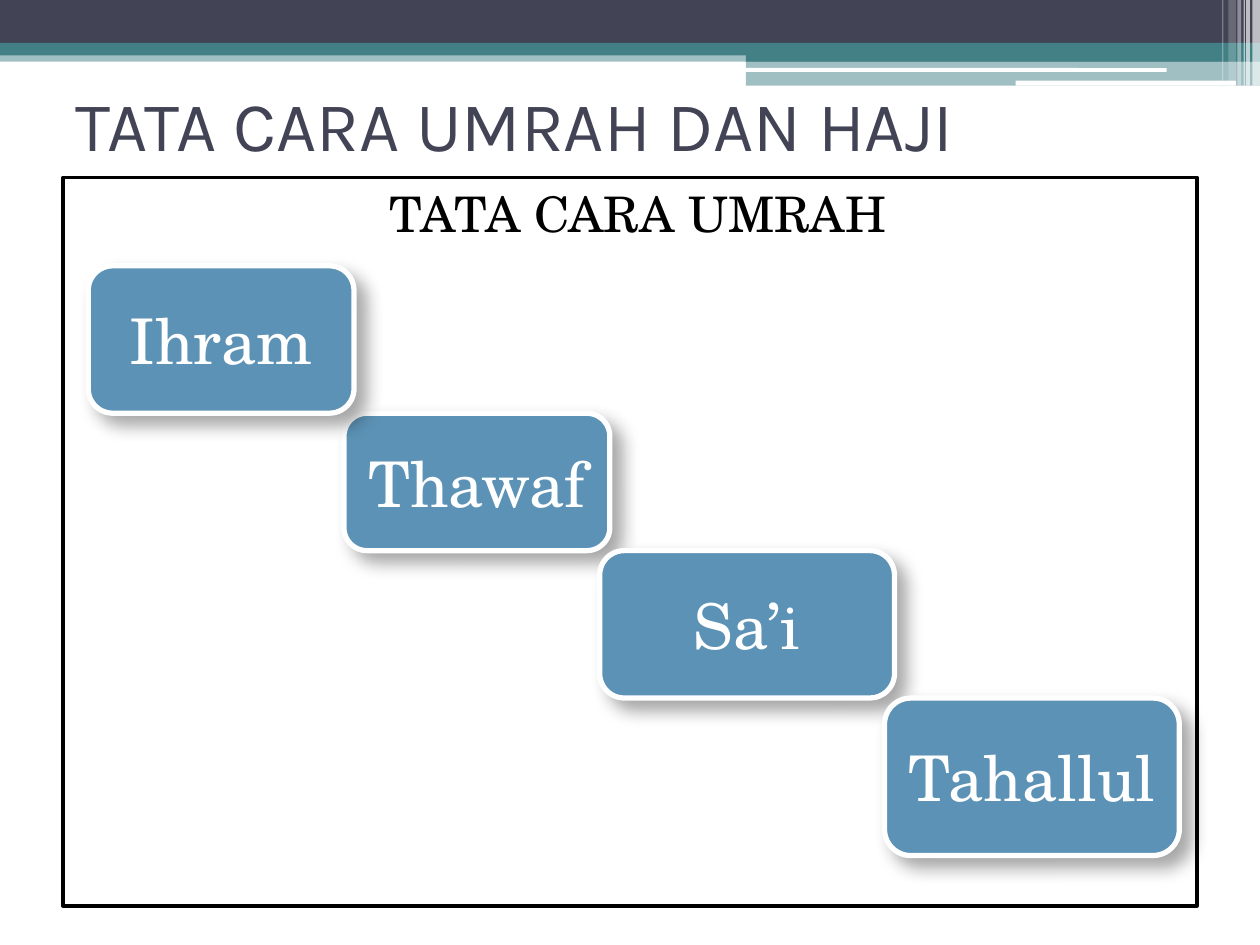
import pptx
import pptx.util
import pptx.dml.color
import pptx.enum.shapes
import pptx.enum.text
import pptx.oxml
import pptx.oxml.ns

Inches, Pt = pptx.util.Inches, pptx.util.Pt
RGB = pptx.dml.color.RGBColor
Shape = pptx.enum.shapes.MSO_SHAPE
Align = pptx.enum.text.PP_ALIGN
Anchor = pptx.enum.text.MSO_ANCHOR

NAVY = RGB(0x42, 0x44, 0x56)
TEAL = RGB(0x43, 0x80, 0x86)
BLUE = RGB(0x5C, 0x92, 0xB5)
WHITE = RGB(0xFF, 0xFF, 0xFF)
BLACK = RGB(0, 0, 0)
SANS, SERIF = "Karla", "TeX Gyre Schola"

BARS = [
    (0, 0.4, 10, 0.09, TEAL, 50),
    (0, 0, 10, 0.34, NAVY, 100),
    (0, 0.34, 10, 0.1, TEAL, 100),
    (5.92, 0.39, 4.08, 0.1, TEAL, 100),
    (5.92, 0.48, 4.08, 0.2, TEAL, 50),
]
LINES = [(5.91, 0.54, 3.35, 0.03), (8.06, 0.64, 1.75, 0.04)]
STRIPES = [
    (9.94, 0.06, 0.68, 65),
    (9.89, 0.03, 0.68, 65),
    (9.87, 0.01, 0.68, 60),
    (9.82, 0.03, 0.68, 40),
    (9.75, 0.06, 0.64, 20),
    (9.7, 0.01, 0.64, 30),
]
STEPS = [
    ("Ihram", 2.11, 1.17),
    ("Thawaf", 2.11, 1.09),
    ("Sa’i", 2.34, 1.17),
    ("Tahallul", 2.34, 1.25),
]


def add_xml(parent, text):
    """Append an XML snippet in the drawing namespace."""
    head, tail = text.split(" ", 1)
    space = pptx.oxml.ns.nsdecls("a")
    parent.append(pptx.oxml.parse_xml(f"{head} {space} {tail}"))


def add_box(slide, box, fill, kind=Shape.RECTANGLE, alpha=100, line=None, width=0):
    """Add a filled shape without a theme shadow."""
    shape = slide.shapes.add_shape(kind, *map(Inches, box))
    shape.shadow.inherit = False
    shape.fill.solid()
    shape.fill.fore_color.rgb = fill
    if alpha < 100:
        color = shape.fill._xPr.find(".//" + pptx.oxml.ns.qn("a:srgbClr"))
        add_xml(color, f'<a:alpha val="{alpha * 1000}"/>')
    if line is None:
        shape.line.fill.background()
    else:
        shape.line.color.rgb = line
        shape.line.width = Pt(width)
    return shape


def put_text(shape, text, size, font, color, align=Align.CENTER, anchor=Anchor.MIDDLE):
    """Write one formatted paragraph and return it."""
    frame = shape.text_frame
    frame.word_wrap = True
    frame.vertical_anchor = anchor
    para = frame.paragraphs[0]
    para.alignment = align
    run = para.add_run()
    run.text = text
    run.font.size = Pt(size)
    run.font.name = font
    run.font.color.rgb = color
    return para


def add_band(slide, left, top):
    """Draw the decorative band across the head of the slide."""
    for x, y, w, h, color, alpha in BARS:
        add_box(slide, (left + x, top + y, w, h), color, alpha=alpha)
    for x, y, w, h in LINES:
        add_box(slide, (left + x, top + y, w, h), WHITE, Shape.ROUNDED_RECTANGLE)
    for x, w, h, alpha in STRIPES:
        add_box(slide, (left + x, top, w, h), WHITE, alpha=alpha)


def add_title(slide, box):
    """Add the slide title."""
    shape = slide.shapes.add_textbox(*map(Inches, box))
    put_text(shape, "TATA CARA UMRAH DAN HAJI", 40, SANS, NAVY, align=Align.LEFT)


def add_step(slide, box, name):
    """Add one rounded step with a soft shadow."""
    shape = add_box(slide, box, BLUE, Shape.ROUNDED_RECTANGLE, line=WHITE, width=3)
    effects = shape._element.spPr.find(pptx.oxml.ns.qn("a:effectLst"))
    add_xml(
        effects,
        f'<a:outerShdw blurRad="{Pt(10.2)}" dist="{Pt(8)}" dir="2700000" '
        'algn="tl" rotWithShape="0"><a:srgbClr val="000000">'
        '<a:alpha val="35000"/></a:srgbClr></a:outerShdw>',
    )
    put_text(shape, name, 36, SERIF, WHITE)


def add_panel(slide, box):
    """Add the framed panel with its heading and descending steps."""
    frame = add_box(slide, box, WHITE, line=BLACK, width=2)
    para = put_text(frame, "TATA CARA UMRAH", 28, SERIF, BLACK, anchor=Anchor.TOP)
    para.space_before = Pt(3)
    props = para._p.get_or_add_pPr()
    props.set("marL", str(Inches(0.4)))
    props.set("indent", str(Inches(-0.28)))
    x, y = box[0] + 0.2, box[1] + 0.7
    places = []
    for name, w, h in STEPS:
        places.append(((x, y, w, h), name))
        x, y = x + w - 0.08, y + h
    for place, name in places[1:] + places[:1]:
        add_step(slide, place, name)


def main():
    """Build and save the slide."""
    deck = pptx.Presentation()
    deck.slide_width, deck.slide_height = Inches(10), Inches(7.5)
    slide = deck.slides.add_slide(deck.slide_layouts[6])
    add_band(slide, 0, 0)
    add_title(slide, (0.5, 0.55, 9, 0.86))
    add_panel(slide, (0.5, 1.41, 9, 5.78))
    deck.save("out.pptx")


if __name__ == "__main__":
    main()
